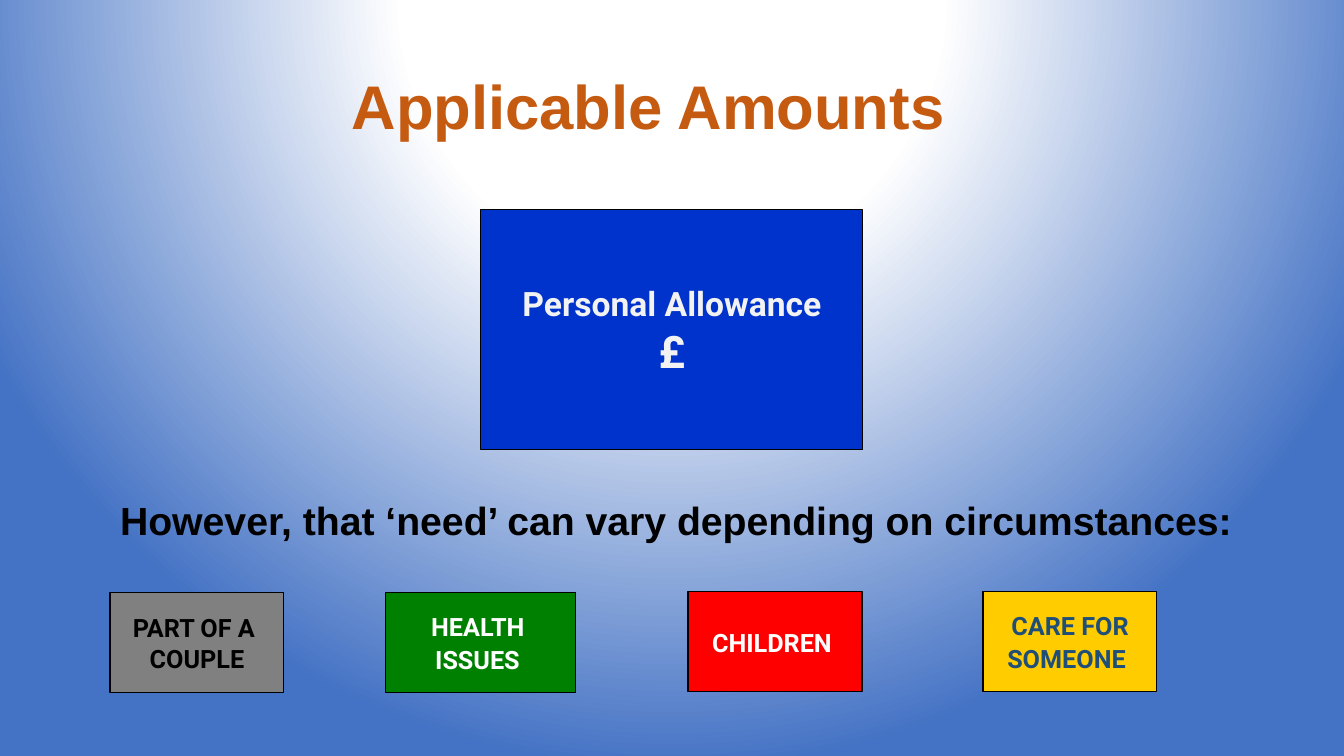
"""Build the Applicable Amounts slide."""
from dataclasses import dataclass

from pptx import Presentation
from pptx.dml.color import RGBColor
from pptx.enum.shapes import MSO_SHAPE
from pptx.enum.text import MSO_ANCHOR, MSO_AUTO_SIZE, PP_ALIGN
from pptx.oxml import parse_xml
from pptx.oxml.ns import nsdecls
from pptx.util import Emu, Pt

RECTANGLE = MSO_SHAPE.RECTANGLE
TOP, MIDDLE = MSO_ANCHOR.TOP, MSO_ANCHOR.MIDDLE
NO_AUTOFIT = MSO_AUTO_SIZE.NONE
LEFT, CENTER = PP_ALIGN.LEFT, PP_ALIGN.CENTER
EMU_PER_PIXEL = 914400 / 100.8


@dataclass(frozen=True)
class Theme:
    """Colours, fonts and type sizes of the slide."""
    heading_font: str = "Arial"
    box_font: str = "Roboto"
    white: str = "FFFFFF"
    black: str = "000000"
    backdrop: str = "4472C4"
    title: str = "C55A11"
    allowance: str = "0033CC"
    allowance_text: str = "F2F2F2"
    couple: str = "808080"
    health: str = "008000"
    children: str = "FF0000"
    care: str = "FFCC00"
    care_text: str = "1F4E79"
    title_size: int = 44
    body_size: int = 28
    pound_size: int = 32
    allowance_size: int = 24
    label_size: int = 18
    space_size: int = 20
    border: float = 0.75


THEME = Theme()


def px(length):
    """Turn pixels into EMU."""
    return Emu(round(length * EMU_PER_PIXEL))


def set_background(slide):
    """Paint a circular gradient that is centred above the slide."""
    stops = ((0, THEME.white), (35, THEME.white), (100, THEME.backdrop))
    stop_xml = "".join(
        f'<a:gs pos="{percent * 1000}"><a:srgbClr val="{color}"/></a:gs>'
        for percent, color in stops)
    slide.element.cSld.insert(0, parse_xml(
        f'<p:bg {nsdecls("p", "a")}><p:bgPr><a:gradFill rotWithShape="1">'
        f'<a:gsLst>{stop_xml}</a:gsLst><a:path path="circle">'
        '<a:fillToRect l="50000" t="-80000" r="50000" b="180000"/></a:path>'
        '</a:gradFill><a:effectLst/></p:bgPr></p:bg>'))


def write_text(shape, lines, *, font, color, align=CENTER, anchor=MIDDLE,
               wrap=True, line_spacing=None):
    """Write lines of (text, size) runs in bold with one format."""
    frame = shape.text_frame
    frame.auto_size = NO_AUTOFIT
    frame.word_wrap = wrap
    frame.vertical_anchor = anchor
    for index, runs in enumerate(lines):
        paragraph = frame.add_paragraph() if index else frame.paragraphs[0]
        paragraph.alignment = align
        paragraph.space_before = Pt(0)
        if line_spacing:
            paragraph.line_spacing = line_spacing
        for text, size in runs:
            run = paragraph.add_run()
            run.text = text
            run.font.name = font
            run.font.size = Pt(size)
            run.font.bold = True
            run.font.color.rgb = RGBColor.from_string(color)


def fill_placeholder(placeholder, bounds, text, size, color, **text_format):
    """Move a placeholder and write one line without a bullet."""
    (placeholder.left, placeholder.top,
     placeholder.width, placeholder.height) = map(px, bounds)
    properties = placeholder.text_frame.paragraphs[0]._p.get_or_add_pPr()
    properties.set("marL", "0")
    properties.set("indent", "0")
    properties.append(parse_xml(f'<a:buNone {nsdecls("a")}/>'))
    write_text(placeholder, [[(text, size)]], font=THEME.heading_font,
               color=color, line_spacing=0.9, **text_format)


def add_box(slide, bounds, fill, color, lines):
    """Add a bordered rectangle with centred text."""
    box = slide.shapes.add_shape(RECTANGLE, *map(px, bounds))
    box.shadow.inherit = False
    box.fill.solid()
    box.fill.fore_color.rgb = RGBColor.from_string(fill)
    box.line.color.rgb = RGBColor.from_string(THEME.black)
    box.line.width = Pt(THEME.border)
    write_text(box, lines, font=THEME.box_font, color=color, wrap=False)


def main():
    """Build and save the slide."""
    presentation = Presentation()
    presentation.slide_width, presentation.slide_height = px(1344), px(756)
    slide = presentation.slides.add_slide(presentation.slide_layouts[1])
    set_background(slide)
    fill_placeholder(slide.shapes.title, (69, 37, 1159, 146),
                     "Applicable Amounts", THEME.title_size, THEME.title)
    fill_placeholder(slide.placeholders[1], (110, 497, 1157, 121),
                     "However, that ‘need’ can vary depending on circumstances:",
                     THEME.body_size, THEME.black, align=LEFT, anchor=TOP)

    label, space = THEME.label_size, (" ", THEME.space_size)
    circumstances = (
        ((110, 593, 174, 100), THEME.couple, THEME.black,
         [[("PART OF A ", label)], [("COUPLE", label)]]),
        ((386, 593, 190, 100), THEME.health, THEME.white,
         [[("HEALTH ", label)], [("ISSUES", label), space]]),
        ((688, 592, 174, 100), THEME.children, THEME.white,
         [[("CHILDREN ", label)]]),
        ((983, 592, 174, 100), THEME.care, THEME.care_text,
         [[("CARE FOR", label)], [("SOMEONE", label), space]]),
    )
    for bounds, fill, color, lines in circumstances:
        add_box(slide, bounds, fill, color, lines)
    add_box(slide, (481, 210, 382, 240), THEME.allowance, THEME.allowance_text,
            [[("Personal Allowance", THEME.allowance_size)],
             [("£", THEME.pound_size)]])
    presentation.save("out.pptx")


if __name__ == "__main__":
    main()
